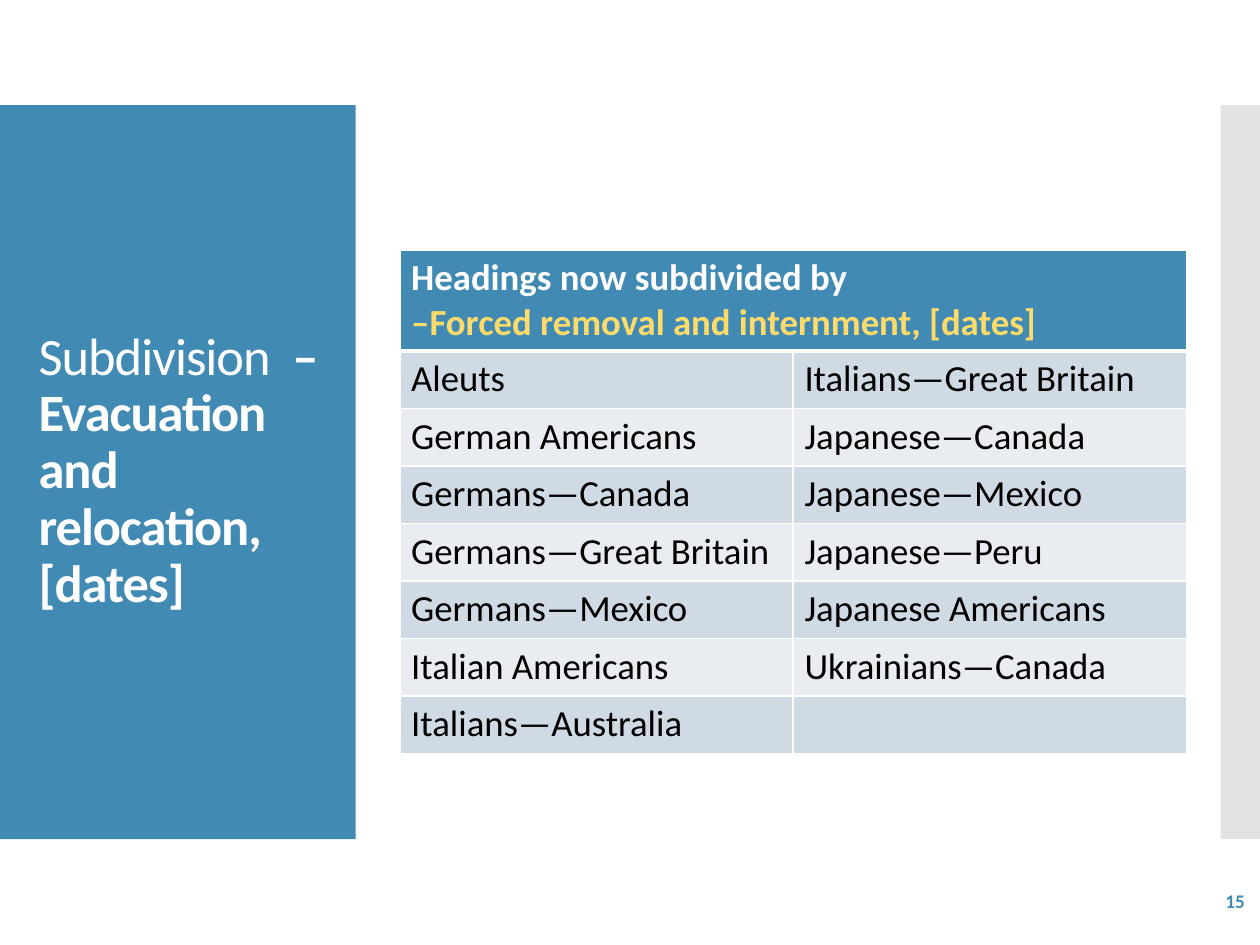
import pptx
import pptx.util
import pptx.dml.color
import pptx.enum.shapes
import pptx.enum.text
import pptx.oxml.ns
from lxml import etree

Pt = pptx.util.Pt
qn = pptx.oxml.ns.qn
MID = pptx.enum.text.MSO_ANCHOR.MIDDLE
RIGHT = pptx.enum.text.PP_ALIGN.RIGHT

COLORS = {
    "blue": "418AB3", "gray": "C8C8C8", "white": "FFFFFF", "black": "000000",
    "gold": "FEDB6A", "dark": "CFDAE5", "light": "E9EDF2",
}
LEFT = ["Aleuts", "German Americans", "Germans—Canada", "Germans—Great Britain",
        "Germans—Mexico", "Italian Americans", "Italians—Australia"]
OTHER = ["Italians—Great Britain", "Japanese—Canada", "Japanese—Mexico",
         "Japanese—Peru", "Japanese Americans", "Ukrainians—Canada", ""]


def rgb(name):
    return pptx.dml.color.RGBColor.from_string(COLORS[name])


def write(para, text, size=21, color="black", bold=False, space=None):
    run = para.add_run()
    run.text = text
    font = run.font
    font.name, font.size, font.bold = "Calibri", Pt(size), bold
    font.color.rgb = rgb(color)
    if space is not None:
        run._r.get_or_add_rPr().set("spc", str(space))


def add_box(slide, box):
    frame = slide.shapes.add_textbox(*map(Pt, box)).text_frame
    frame.word_wrap = True
    frame.vertical_anchor = MID
    return frame.paragraphs[0]


def add_panel(slide, box, color, alpha=None):
    kind = pptx.enum.shapes.MSO_SHAPE.RECTANGLE
    panel = slide.shapes.add_shape(kind, *map(Pt, box))
    panel.shadow.inherit = False
    panel.line.fill.background()
    panel.fill.solid()
    panel.fill.fore_color.rgb = rgb(color)
    if alpha:
        tint = panel._element.spPr.find(".//" + qn("a:srgbClr"))
        etree.SubElement(tint, qn("a:alpha"), val=str(alpha * 1000))


def add_title(slide, box):
    para = add_box(slide, box)
    para.line_spacing = 0.9
    write(para, "Subdivision  ", size=30, color="white", space=-60)
    write(para, "–Evacuation and relocation, [dates]", size=30, color="white",
          bold=True, space=-60)


def add_number(slide, box):
    para = add_box(slide, box)
    para.alignment = RIGHT
    write(para, "15", size=11, color="blue", bold=True)


def style_cell(cell, fill, base=1):
    cell.margin_left = cell.margin_right = Pt(6.5)
    cell.margin_top = cell.margin_bottom = Pt(3.3)
    # Borders must come before the fill in the cell properties
    props = cell._tc.get_or_add_tcPr()
    for side, width in (("L", 1), ("R", 1), ("T", 1), ("B", base)):
        line = etree.SubElement(props, qn("a:ln" + side), w=str(Pt(width)))
        solid = etree.SubElement(line, qn("a:solidFill"))
        etree.SubElement(solid, qn("a:srgbClr"), val=COLORS["white"])
    cell.fill.solid()
    cell.fill.fore_color.rgb = rgb(fill)


def add_grid(slide, box, head):
    left, top, width, height = box
    count = len(LEFT)
    table = slide.shapes.add_table(count + 1, 2, *map(Pt, box)).table
    for col in table.columns:
        col.width = Pt(width / 2)
    for row in table.rows:
        row.height = Pt((height - head) / count)
    table.rows[0].height = Pt(head)

    # Heading across both columns
    for col in range(2):
        style_cell(table.cell(0, col), "blue", base=3)
    first = table.cell(0, 0)
    first.merge(table.cell(0, 1))
    frame = first.text_frame
    write(frame.paragraphs[0], "Headings now subdivided by", color="white", bold=True)
    write(frame.add_paragraph(), "–Forced removal and internment, [dates]",
          color="gold", bold=True)

    # Banded body rows
    for row, pair in enumerate(zip(LEFT, OTHER), 1):
        for col, text in enumerate(pair):
            cell = table.cell(row, col)
            style_cell(cell, "dark" if row % 2 else "light", base=1)
            if text:
                write(cell.text_frame.paragraphs[0], text)
        for col in range(2) if row == 1 else ():
            edge = table.cell(row, col)._tc.tcPr.find(qn("a:lnT"))
            edge.set("w", str(Pt(3)))


def main():
    deck = pptx.Presentation()
    deck.slide_width, deck.slide_height = Pt(720), Pt(540)
    slide = deck.slides.add_slide(deck.slide_layouts[6])
    add_panel(slide, (0, 60, 203.25, 419.5), "blue")
    add_panel(slide, (697.5, 60, 22.5, 419.5), "gray", alpha=50)
    add_title(slide, (15, 88.5, 174.5, 362))
    add_number(slide, (628, 500.5, 90.5, 29))
    add_grid(slide, (228.5, 142.75, 449.5, 288), head=57.9)
    deck.save("out.pptx")


if __name__ == "__main__":
    main()
